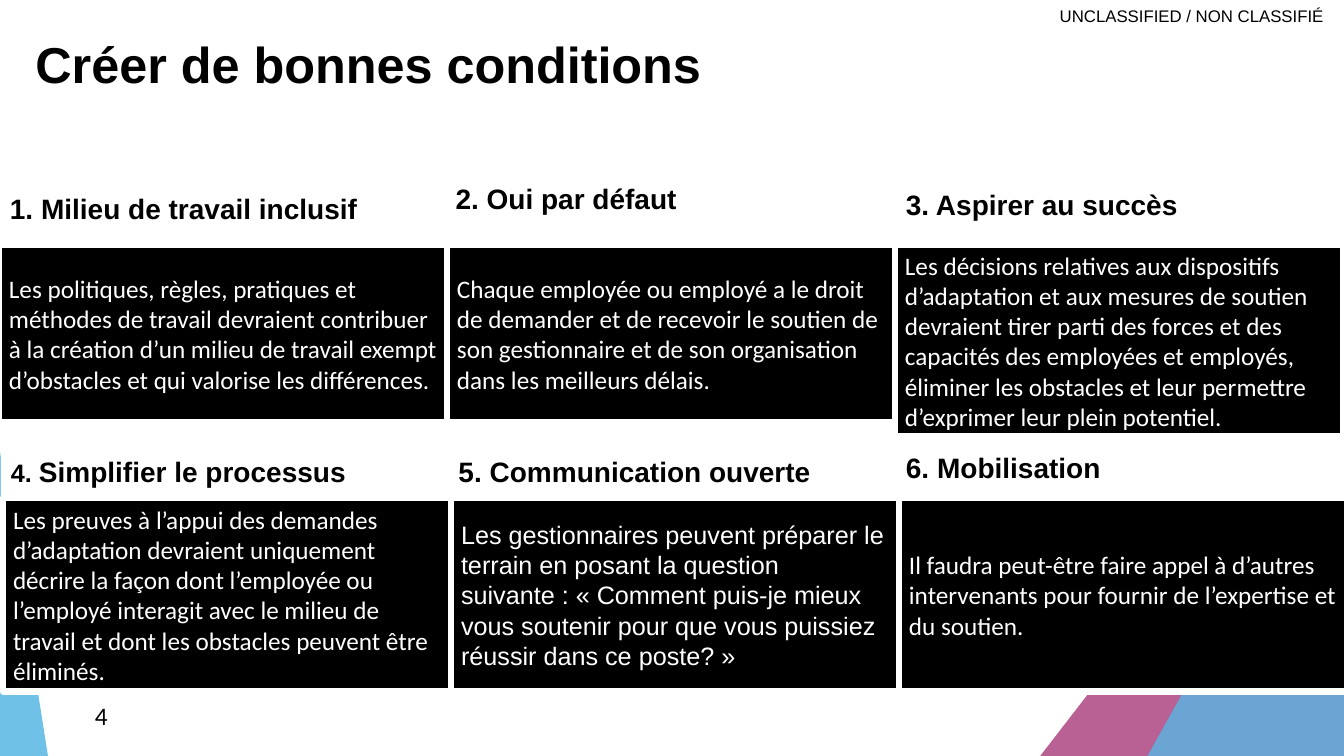
from lxml import etree
from pptx import Presentation
from pptx.dml.color import RGBColor
from pptx.enum import shapes, text
from pptx.oxml.ns import qn
from pptx.util import Pt

COLOURS = {"black": "000000", "white": "FFFFFF", "pink": "9E246B", "blue": "58B7E3"}
LEFT, RIGHT = text.PP_ALIGN.LEFT, text.PP_ALIGN.RIGHT
HEADING = {"name": "Arial", "size": Pt(20), "bold": True}
BODY = {"name": "Calibri", "size": Pt(18)}


def write(shape, runs, colour="black", alignment=LEFT):
    """Fill a shape with one paragraph made of (text, font format) runs."""
    frame = shape.text_frame
    frame.word_wrap = True
    frame.vertical_anchor = text.MSO_ANCHOR.MIDDLE
    paragraph = frame.paragraphs[0]
    paragraph.alignment = alignment
    for words, font_format in runs:
        run = paragraph.add_run()
        run.text = words
        run.font.color.rgb = RGBColor.from_string(COLOURS[colour])
        for name, value in font_format.items():
            setattr(run.font, name, value)
    return paragraph


def add_filled(kind, box, colour):
    shape = slide.shapes.add_shape(kind, *map(Pt, box))
    shape.shadow.inherit = False
    shape.fill.solid()
    shape.fill.fore_color.rgb = RGBColor.from_string(COLOURS[colour])
    shape.line.fill.background()
    return shape


presentation = Presentation()
presentation.slide_width, presentation.slide_height = Pt(960), Pt(540)
slide = presentation.slides.add_slide(presentation.slide_layouts[5])

# Corner triangles: box, apex position, colour, opacity in percent
triangles = [
    ((738, 258.5, 222.5, 288), 1, "pink", 72),
    ((816.5, 288.7, 143.5, 257), 1, "blue", 80),
    ((0, 322.6, 35.3, 223.9), 0, "blue", 85),
]
for box, apex, colour, opacity in triangles:
    triangle = add_filled(shapes.MSO_SHAPE.ISOSCELES_TRIANGLE, box, colour)
    triangle.adjustments[0] = apex
    colour_element = triangle.fill._xPr.find(qn("a:solidFill"))[0]
    etree.SubElement(colour_element, qn("a:alpha"), val=str(opacity * 1000))

marking = slide.shapes.add_textbox(Pt(742), Pt(0), Pt(218), Pt(22.3))
frame = marking.text_frame
frame.margin_left = frame.margin_top = frame.margin_bottom = 0
frame.margin_right = Pt(14.4)
write(marking, [("UNCLASSIFIED / NON CLASSIFIÉ", {"name": "Arial", "size": Pt(12)})],
      alignment=RIGHT)

title = slide.shapes.title
title.left, title.top, title.width, title.height = Pt(18), Pt(18), Pt(805), Pt(60.5)
title_format = {"name": "Arial", "size": Pt(36), "bold": True}
write(title, [("Créer de bonnes conditions", title_format)]).line_spacing = 0.9

# Cards, row by row: heading box, heading runs, body text, body font
cards = [
    ((0, 116, 324, 65.5), [("1. Milieu de travail inclusif", HEADING)],
     "Les politiques, règles, pratiques et méthodes de travail devraient contribuer "
     "à la création d’un milieu de travail exempt d’obstacles et qui valorise les "
     "différences.", BODY),
    ((318.3, 108.7, 324, 66.2), [("2. Oui par défaut", HEADING)],
     "Chaque employée ou employé a le droit de demander et de recevoir le soutien de "
     "son gestionnaire et de son organisation dans les meilleurs délais.", BODY),
    ((640, 113, 324, 65.5), [("3. Aspirer au succès", HEADING)],
     "Les décisions relatives aux dispositifs d’adaptation et aux mesures de soutien "
     "devraient tirer parti des forces et des capacités des employées et employés, "
     "éliminer les obstacles et leur permettre d’exprimer leur plein potentiel.", BODY),
    ((0.7, 316.8, 322, 39), [("4. ", HEADING | {"size": Pt(18)}),
                             ("Simplifier le processus", HEADING)],
     "Les preuves à l’appui des demandes d’adaptation devraient uniquement décrire la "
     "façon dont l’employée ou l’employé interagit avec le milieu de travail et dont "
     "les obstacles peuvent être éliminés.", BODY),
    ((320.4, 316.8, 320.4, 39), [("5. Communication ouverte", HEADING)],
     "Les gestionnaires peuvent préparer le terrain en posant la question suivante : "
     "« Comment puis-je mieux vous soutenir pour que vous puissiez réussir dans ce "
     "poste? »", BODY | {"name": "Arial"}),
    ((640, 311.8, 320.4, 44), [("6. Mobilisation", HEADING)],
     "Il faudra peut-être faire appel à d’autres intervenants pour fournir de "
     "l’expertise et du soutien.", BODY),
]
row_starts = [(-0.7, 175), (2.2, 355.7)]
body_heights = [126.7, 126.7, 136.8, 138.2, 138.2, 138.2]
column_pitch = 320

for index, (heading_box, heading_runs, body_text, body_font) in enumerate(cards):
    row, column = divmod(index, 3)
    heading = add_filled(shapes.MSO_SHAPE.RECTANGLE, heading_box, "white")
    write(heading, heading_runs)
    left, top = row_starts[row]
    body_box = (left + column * column_pitch, top, column_pitch, body_heights[index])
    body = add_filled(shapes.MSO_SHAPE.RECTANGLE, body_box, "black")
    body.line.color.rgb = RGBColor.from_string(COLOURS["white"])
    body.line.width = Pt(4.5)
    write(body, [(body_text, body_font)], "white")

page_number = slide.shapes.add_textbox(Pt(30), Pt(497), Pt(54), Pt(28.8))
write(page_number, [("4", BODY)], alignment=RIGHT)

presentation.save("out.pptx")
